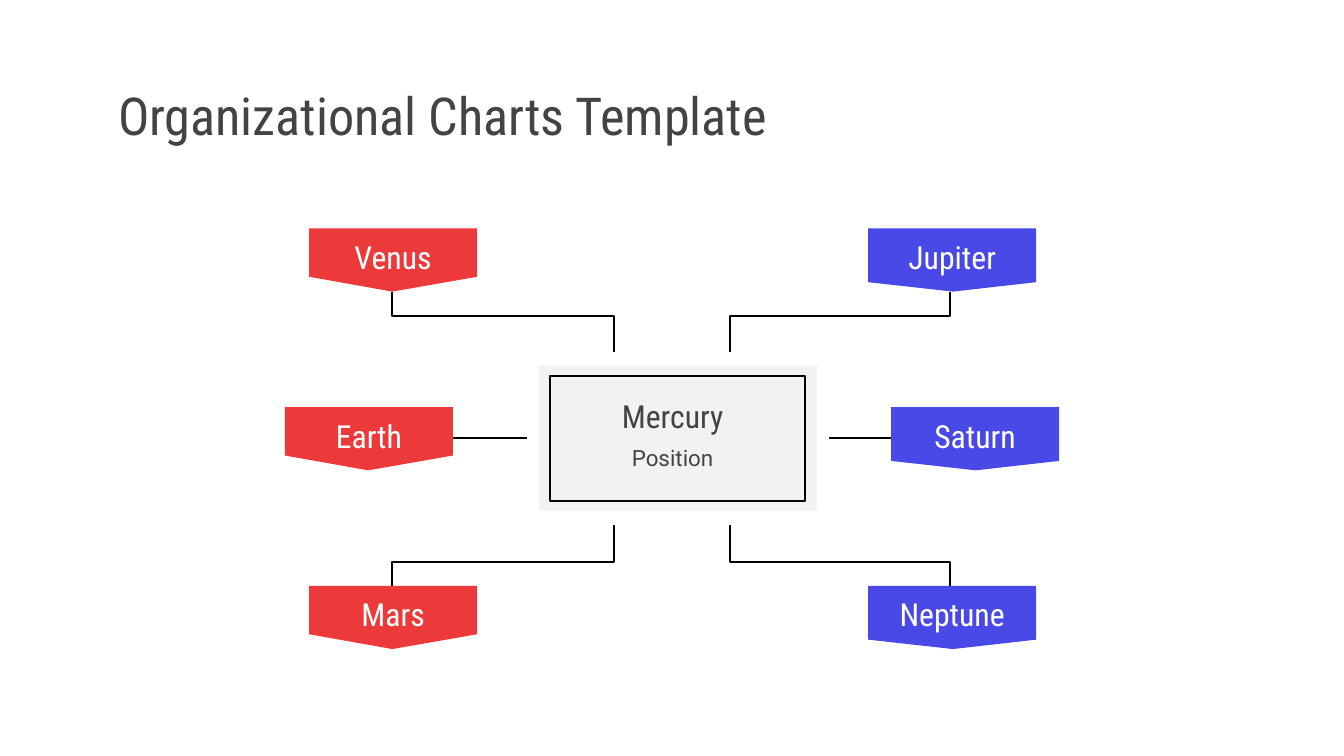
"""Build an organizational chart slide with a central role and six labels."""
from dataclasses import dataclass

from pptx import Presentation
from pptx import util as u
from pptx.dml import color as c
from pptx.enum import shapes, text
from pptx.oxml import ns


@dataclass(frozen=True)
class Theme:
    red: str = "EC3A3B"
    blue: str = "4949E7"
    ink: str = "434343"
    line: str = "000000"
    panel: str = "F2F2F2"
    white: str = "FFFFFF"
    heading: str = "Roboto Condensed"
    body: str = "Roboto"
    title_size: float = 28
    name_size: float = 17
    role_size: float = 12
    line_width: float = 1.06
    straight_width: float = 1.17


@dataclass(frozen=True)
class Side:
    color: str
    shoulder: float
    tip: float
    link_outer: float
    link_inner: float


@dataclass(frozen=True)
class Label:
    name: str
    side: Side
    left: float
    top: float
    link_y: tuple[float, ...]


THEME = Theme()
LABEL_WIDTH, LABEL_HEIGHT = 1.25, 0.47
LEFT = Side(THEME.red, 0.36, 0.62, 2.92, 4.57)
RIGHT = Side(THEME.blue, 0.4, 0.63, 7.07, 5.43)
TOP_LINK, BOTTOM_LINK = (2.17, 2.35, 2.62), (4.36, 4.18, 3.91)
LABELS = (
    Label("Earth", LEFT, 2.12, 3.03, ()),
    Label("Saturn", RIGHT, 6.63, 3.03, ()),
    Label("Mars", LEFT, 2.3, 4.36, BOTTOM_LINK),
    Label("Neptune", RIGHT, 6.46, 4.36, BOTTOM_LINK),
    Label("Venus", LEFT, 2.3, 1.7, TOP_LINK),
    Label("Jupiter", RIGHT, 6.46, 1.7, TOP_LINK),
)
STRAIGHT_LINKS = ((2.66, 3.92), (6.17, 7.43))
STRAIGHT_Y = 3.26


def rgb(value: str) -> c.RGBColor:
    return c.RGBColor.from_string(value)


def paint(shape, fill: str | None = None, line: str | None = None) -> None:
    shape.shadow.inherit = False
    if fill:
        shape.fill.solid()
        shape.fill.fore_color.rgb = rgb(fill)
    else:
        shape.fill.background()
    if line:
        shape.line.color.rgb = rgb(line)
        shape.line.width = u.Pt(THEME.line_width)
    else:
        shape.line.fill.background()


def write(shape, words: str, size: float, color: str, font: str = THEME.heading,
          align=text.PP_ALIGN.CENTER, bottom: float = 0.1) -> None:
    frame = shape.text_frame
    frame.word_wrap = True
    frame.vertical_anchor = text.MSO_ANCHOR.MIDDLE
    frame.margin_left = frame.margin_right = frame.margin_top = u.Inches(0.1)
    frame.margin_bottom = u.Inches(bottom)
    para = frame.paragraphs[0]
    para.alignment = align
    span = para.add_run()
    span.text = words
    span.font.size = u.Pt(size)
    span.font.name = font
    span.font.color.rgb = rgb(color)


def add_outline(page, points: list[tuple[float, float]], close: bool):
    start, *rest = [(u.Inches(x), u.Inches(y)) for x, y in points]
    builder = page.shapes.build_freeform(*start)
    builder.add_line_segments(rest, close=close)
    return builder.convert_to_shape()


def add_straight_link(page, start: float, end: float) -> None:
    link = page.shapes.add_connector(
        shapes.MSO_CONNECTOR.STRAIGHT,
        u.Inches(start), u.Inches(STRAIGHT_Y), u.Inches(end), u.Inches(STRAIGHT_Y))
    link.line.color.rgb = rgb(THEME.line)
    link.line.width = u.Pt(THEME.straight_width)
    properties = link._element.spPr
    properties.append(properties.makeelement(ns.qn("a:effectLst"), {}))


def add_label(page, label: Label) -> None:
    side, left, top = label.side, label.left, label.top
    right, shoulder = left + LABEL_WIDTH, top + side.shoulder
    box = add_outline(page, [
        (left, top), (left, shoulder), (left + side.tip, top + LABEL_HEIGHT),
        (right, shoulder), (right, top)], close=True)
    paint(box, fill=side.color)
    write(box, label.name, THEME.name_size, THEME.white, bottom=0.15)
    if label.link_y:
        outer, knee, inner = label.link_y
        link = add_outline(page, [
            (side.link_outer, outer), (side.link_outer, knee),
            (side.link_inner, knee), (side.link_inner, inner)], close=False)
        paint(link, line=THEME.line)


def add_rectangle(page, area: tuple[float, ...], fill: str | None = None,
                  line: str | None = None) -> None:
    box = page.shapes.add_shape(shapes.MSO_SHAPE.RECTANGLE, *map(u.Inches, area))
    paint(box, fill, line)


def add_text(page, area: tuple[float, ...], words: str, size: float,
             font: str = THEME.heading, align=text.PP_ALIGN.CENTER) -> None:
    box = page.shapes.add_textbox(*map(u.Inches, area))
    write(box, words, size, THEME.ink, font, align)


def main() -> None:
    deck = Presentation()
    deck.slide_width = u.Inches(10)
    deck.slide_height = u.Inches(10 * 9 / 16)
    page = deck.slides.add_slide(deck.slide_layouts[6])
    add_text(page, (0.78, 0.59, 8.45, 0.53), "Organizational Charts Template",
             THEME.title_size, align=text.PP_ALIGN.LEFT)
    for start, end in STRAIGHT_LINKS:
        add_straight_link(page, start, end)
    for label in LABELS:
        add_label(page, label)
    add_rectangle(page, (4.01, 2.72, 2.07, 1.08), fill=THEME.panel)
    add_rectangle(page, (4.09, 2.8, 1.9, 0.93), line=THEME.line)
    add_text(page, (4.22, 2.95, 1.57, 0.29), "Mercury", THEME.name_size)
    add_text(page, (4.22, 3.24, 1.57, 0.33), "Position", THEME.role_size, THEME.body)
    deck.save("out.pptx")


if __name__ == "__main__":
    main()
